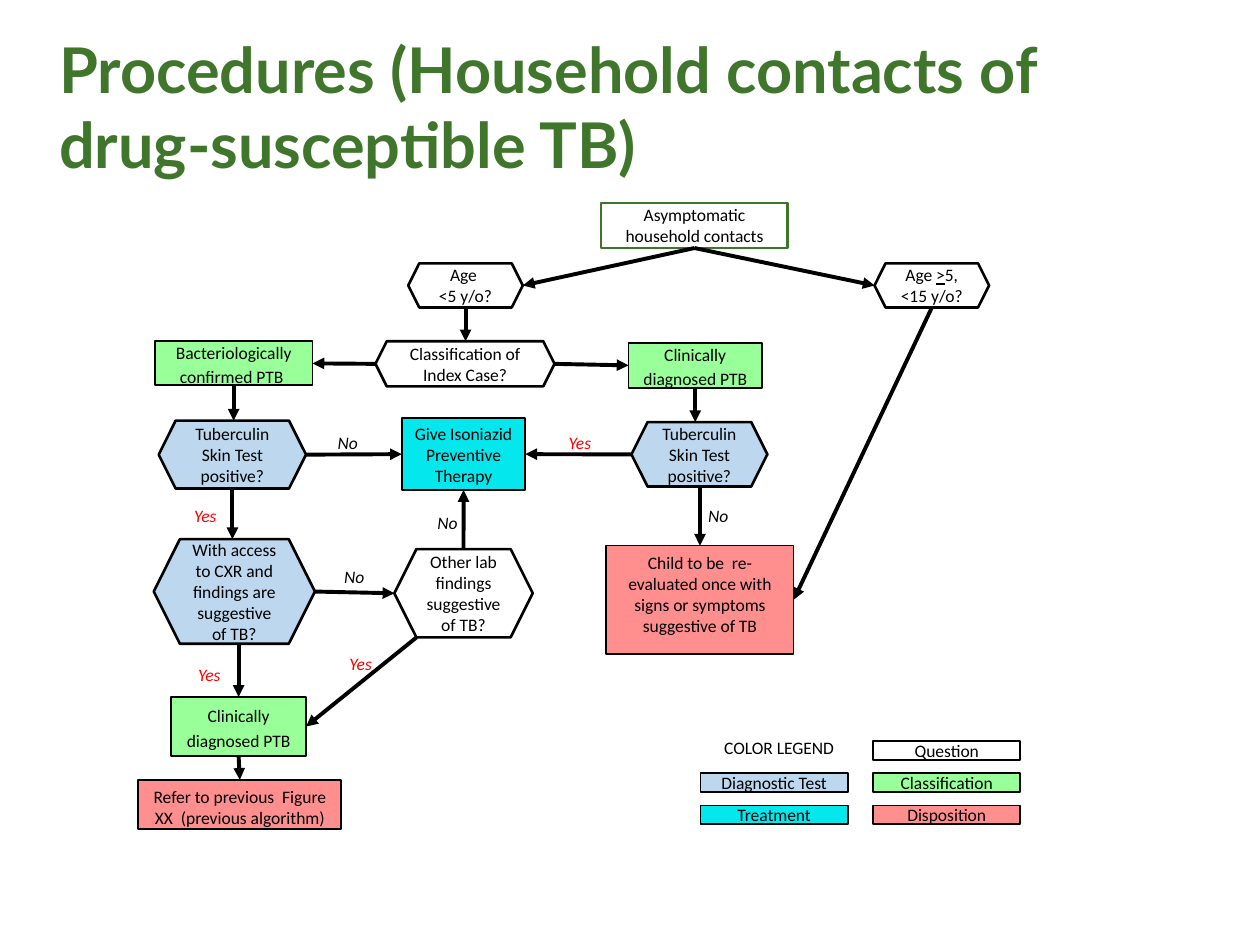
from dataclasses import dataclass

from lxml import etree
from pptx import Presentation
from pptx.dml.color import RGBColor
from pptx.enum import shapes, text
from pptx.oxml.ns import qn
from pptx.util import Cm, Pt

TOP, LEFT, BOTTOM, RIGHT, LOWER_LEFT = range(5)
RECT = shapes.MSO_SHAPE.RECTANGLE
HEX = shapes.MSO_SHAPE.HEXAGON


@dataclass(frozen=True)
class Theme:
    title_font: str = "Lato"
    body_font: str = "Calibri"
    title_size: float = 36
    body_size: float = 10
    title: str = "3F762B"
    start_line: str = "3E752A"
    ink: str = "000000"
    yes: str = "FF0000"
    question: str = "FFFFFF"
    test: str = "BDD7EE"
    classification: str = "99FF99"
    treatment: str = "03E7ED"
    disposition: str = "FF8F8F"
    arrow_width: float = 2.25


THEME = Theme()

TITLE = "Procedures (Household contacts of drug-susceptible TB)"

# name: (outline, role, (left, top, width, height) in cm, text); _x_ underlines x
STEPS = {
    "contacts": (RECT, "question", (12.12, 4.09, 3.76, 0.91), "Asymptomatic household contacts"),
    "under 5": (HEX, "question", (8.23, 5.31, 2.31, 0.89), "Age \n<5 y/o?"),
    "over 5": (HEX, "question", (17.63, 5.31, 2.31, 0.89), "Age _>_5,\n<15 y/o?"),
    "index case": (HEX, "question", (7.57, 6.88, 3.61, 0.91), "Classification of Index Case?"),
    "confirmed": (RECT, "classification", (3.12, 6.88, 3.18, 0.89),
                  "Bacteriologically confirmed PTB "),
    "diagnosed": (RECT, "classification", (12.67, 6.91, 2.69, 0.91), "Clinically diagnosed PTB"),
    "left skin test": (HEX, "test", (3.2, 8.48, 2.97, 1.37), "Tuberculin Skin Test positive?"),
    "right skin test": (HEX, "test", (12.73, 8.51, 2.74, 1.3), "Tuberculin Skin Test positive?"),
    "therapy": (RECT, "treatment", (8.1, 8.43, 2.49, 1.45), "Give Isoniazid Preventive Therapy"),
    "x-ray": (HEX, "test", (3.1, 10.87, 3.25, 2.11),
              "With access to CXR and findings are suggestive of TB?"),
    "other lab": (HEX, "question", (7.95, 11.07, 2.79, 1.78),
                  "Other lab findings suggestive of TB?"),
    "re-evaluate": (RECT, "disposition", (12.22, 11, 3.78, 2.18),
                    "Child to be  re-evaluated once with signs or symptoms suggestive of TB"),
    "child PTB": (RECT, "classification", (3.45, 14.05, 2.72, 1.19), "Clinically diagnosed PTB"),
    "refer": (RECT, "disposition", (2.79, 15.72, 4.09, 0.99),
              "Refer to previous  Figure XX  (previous algorithm)"),
}

ARROWS = [
    ("contacts", BOTTOM, "under 5", RIGHT),
    ("contacts", BOTTOM, "over 5", LEFT),
    ("under 5", BOTTOM, "index case", TOP),
    ("index case", LEFT, "confirmed", RIGHT),
    ("index case", RIGHT, "diagnosed", LEFT),
    ("confirmed", BOTTOM, "left skin test", TOP),
    ("diagnosed", BOTTOM, "right skin test", TOP),
    ("left skin test", RIGHT, "therapy", LEFT),
    ("right skin test", LEFT, "therapy", RIGHT),
    ("left skin test", BOTTOM, "x-ray", TOP),
    ("right skin test", BOTTOM, "re-evaluate", TOP),
    ("x-ray", RIGHT, "other lab", LEFT),
    ("other lab", TOP, "therapy", BOTTOM),
    ("x-ray", BOTTOM, "child PTB", TOP),
    ("other lab", LOWER_LEFT, "child PTB", RIGHT),
    ("child PTB", BOTTOM, "refer", TOP),
    ("over 5", BOTTOM, "re-evaluate", RIGHT),
]

ANSWERS = {
    "No": [(6.45, 8.59), (13.92, 10.06), (8.46, 10.19), (6.58, 11.28)],
    "Yes": [(11.13, 8.59), (3.58, 10.06), (3.66, 13.26), (6.71, 13.03)],
}
ANSWER_SIZE = (1.12, 0.69)

LEGEND_TITLE = ("COLOR LEGEND", (13.56, 14.73, 4.29, 0.69))
LEGEND_COLUMNS = (14.12, 17.6)
LEGEND_TOP, LEGEND_PITCH = 14.94, 0.65
LEGEND_SIZE = (2.97, 0.38)
LEGEND = [  # (row, column, label, role)
    (0, 1, "Question", "question"),
    (1, 0, "Diagnostic Test", "test"),
    (1, 1, "Classification", "classification"),
    (2, 0, "Treatment", "treatment"),
    (2, 1, "Disposition", "disposition"),
]


def rgb(name):
    return RGBColor.from_string(getattr(THEME, name))


def cm(values):
    return [Cm(value) for value in values]


def write(box, content, color="ink", italic=False):
    frame = box.text_frame
    frame.word_wrap = True
    frame.text = content.replace("_", "")
    for para, line in zip(frame.paragraphs, content.split("\n")):
        para.alignment = text.PP_ALIGN.CENTER
        spans = line.split("_")
        para.runs[0].text = spans[0]
        for part in spans[1:]:
            para.add_run().text = part
        for index, span in enumerate(para.runs):
            span.font.name = THEME.body_font
            span.font.size = Pt(THEME.body_size)
            span.font.italic = italic
            span.font.underline = index % 2 == 1
            span.font.color.rgb = rgb(color)


def add_box(page, outline, role, place, content):
    box = page.shapes.add_shape(outline, *cm(place))
    box.shadow.inherit = False
    box.fill.solid()
    box.fill.fore_color.rgb = rgb(role)
    box.line.color.rgb = rgb("ink")
    box.line.width = Pt(1.5 if outline == HEX else 1)
    write(box, content)
    box.text_frame.vertical_anchor = text.MSO_ANCHOR.MIDDLE
    return box


def add_label(page, place, content, color="ink", italic=False):
    label = page.shapes.add_textbox(*cm(place))
    write(label, content, color, italic)
    label.text_frame.auto_size = text.MSO_AUTO_SIZE.SHAPE_TO_FIT_TEXT


def side_point(name, side):
    left, top, width, height = STEPS[name][2]
    return {
        TOP: (left + width / 2, top),
        LEFT: (left, top + height / 2),
        BOTTOM: (left + width / 2, top + height),
        RIGHT: (left + width, top + height / 2),
        LOWER_LEFT: (left + height / 4, top + height),
    }[side]


def add_arrow(page, boxes, start, start_side, end, end_side):
    """Join two steps; only rectangles have their glue points at 0 to 3."""
    x1, y1 = side_point(start, start_side)
    x2, y2 = side_point(end, end_side)
    start_glued, end_glued = STEPS[start][0] == RECT, STEPS[end][0] == RECT
    if {start_side, end_side} == {TOP, BOTTOM}:
        if end_glued and not start_glued:
            x1 = x2
        elif not end_glued:
            x2 = x1
    arrow = page.shapes.add_connector(shapes.MSO_CONNECTOR.STRAIGHT, *cm((x1, y1, x2, y2)))
    if start_glued:
        arrow.begin_connect(boxes[start], start_side)
    if end_glued:
        arrow.end_connect(boxes[end], end_side)
    arrow.line.color.rgb = rgb("ink")
    arrow.line.width = Pt(THEME.arrow_width)
    etree.SubElement(arrow.line._get_or_add_ln(), qn("a:tailEnd"), type="triangle")
    etree.SubElement(arrow._element.spPr, qn("a:effectLst"))


def add_title(page):
    title = page.shapes.title
    title.left, title.top, title.width, title.height = cm((0.94, 0.48, 22.02, 3.18))
    frame = title.text_frame
    frame.text = TITLE
    frame.word_wrap = True
    frame.auto_size = text.MSO_AUTO_SIZE.NONE
    frame.vertical_anchor = text.MSO_ANCHOR.TOP
    para = frame.paragraphs[0]
    para.alignment = text.PP_ALIGN.LEFT
    font = para.runs[0].font
    font.name, font.size, font.bold = THEME.title_font, Pt(THEME.title_size), True
    font.color.rgb = rgb("title")


def main():
    deck = Presentation()
    deck.slide_width, deck.slide_height = Cm(25.4), Cm(19.05)
    page = deck.slides.add_slide(deck.slide_layouts.get_by_name("Title Only"))
    add_title(page)

    boxes = {name: add_box(page, *step) for name, step in STEPS.items()}
    boxes["contacts"].line.color.rgb = rgb("start_line")
    boxes["contacts"].line.width = Pt(1.5)
    for name, (_, role, _, _) in STEPS.items():
        frame = boxes[name].text_frame
        if role == "disposition":
            frame.vertical_anchor = text.MSO_ANCHOR.TOP
        if role in ("classification", "disposition"):
            frame.paragraphs[0].space_after = Pt(10)
        if role == "classification":
            frame.paragraphs[0].line_spacing = 1.15

    for arrow in ARROWS:
        add_arrow(page, boxes, *arrow)
    for answer, corners in ANSWERS.items():
        for corner in corners:
            add_label(page, corner + ANSWER_SIZE, answer, "yes" if answer == "Yes" else "ink", True)

    add_label(page, LEGEND_TITLE[1], LEGEND_TITLE[0])
    for row, column, label, role in LEGEND:
        corner = (LEGEND_COLUMNS[column], LEGEND_TOP + row * LEGEND_PITCH)
        add_box(page, RECT, role, corner + LEGEND_SIZE, label)
    deck.save("out.pptx")


if __name__ == "__main__":
    main()
